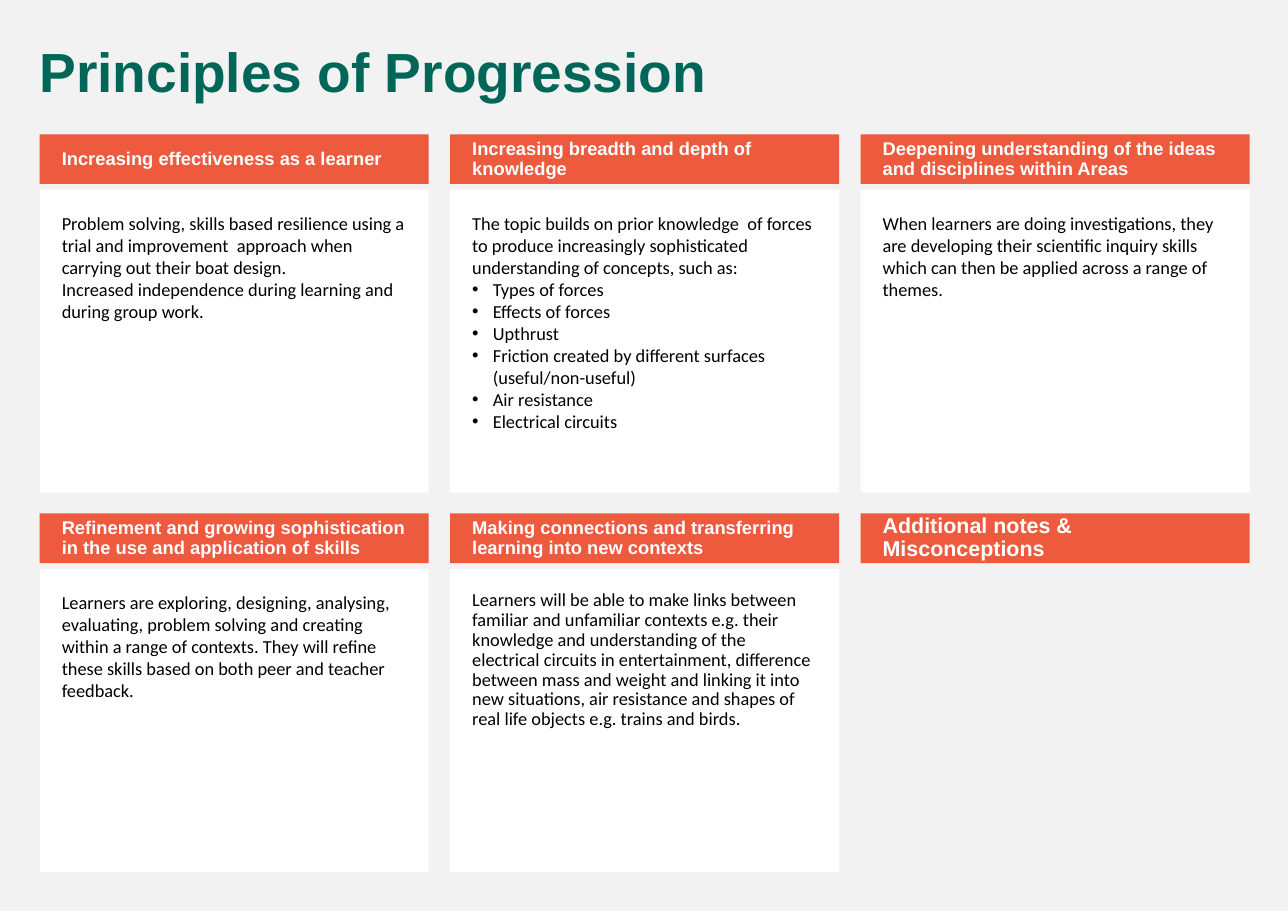
from lxml.etree import SubElement
from pptx import Presentation
from pptx.dml.color import RGBColor
from pptx.enum.shapes import MSO_SHAPE as Shape
from pptx.enum.text import MSO_ANCHOR as Anchor, PP_ALIGN as Align
from pptx.oxml.ns import qn
from pptx.util import Pt

GREY = RGBColor(0xF2, 0xF2, 0xF2)
WHITE = RGBColor(0xFF, 0xFF, 0xFF)
BLACK = RGBColor(0x00, 0x00, 0x00)
ORANGE = RGBColor(0xED, 0x5A, 0x3E)
GREEN = RGBColor(0x00, 0x67, 0x58)

# Card grid
LEFT, TOP = 26, 87.8
COL_STEP, ROW_STEP = 268.2, 247.8
CARD_W, HEADER_H, BODY_H = 254.2, 32.4, 198
BODY_DROP = 36.2
INDENT = 13.5

# Text formats
TIGHT = {"line_spacing": 0.9, "space_before": Pt(11)}
PLAIN = {}
TITLE_FONT = {"name": "Arial", "size": Pt(36), "bold": True}
HEADER_FONT = {"name": "Arial", "size": Pt(12), "bold": True}
NOTES_FONT = HEADER_FONT | {"size": Pt(14)}
BODY_FONT = {"name": "Calibri", "size": Pt(12)}
HEADER_FRAME = {"margin_left": Pt(14.4), "margin_right": Pt(7.2),
                "margin_top": Pt(3.6), "margin_bottom": Pt(3.6),
                "vertical_anchor": Anchor.MIDDLE}
BODY_FRAME = {"margin_left": Pt(14.4), "margin_right": Pt(14.4),
              "margin_top": Pt(14.4), "margin_bottom": Pt(14.4),
              "vertical_anchor": Anchor.TOP}

# Column, row, header, header font, body paragraphs, body spacing
CARDS = [
    (0, 0, "Increasing effectiveness as a learner", HEADER_FONT,
     ["Problem solving, skills based resilience using a trial and "
      "improvement  approach when carrying out their boat design.",
      "Increased independence during learning and during group work."],
     PLAIN),
    (1, 0, "Increasing breadth and depth of knowledge", HEADER_FONT,
     ["The topic builds on prior knowledge  of forces to produce "
      "increasingly sophisticated understanding of concepts, such as:",
      "• Types of forces",
      "• Effects of forces",
      "• Upthrust",
      "• Friction created by different surfaces (useful/non-useful)",
      "• Air resistance",
      "• Electrical circuits"],
     PLAIN),
    (2, 0, "Deepening understanding of the ideas and disciplines within Areas",
     HEADER_FONT,
     ["When learners are doing investigations, they are developing their "
      "scientific inquiry skills which can then be applied across a range "
      "of themes."],
     PLAIN),
    (0, 1, "Refinement and growing sophistication in the use and "
     "application of skills", HEADER_FONT,
     ["Learners are exploring, designing, analysing, evaluating, problem "
      "solving and creating within a range of contexts. They will refine "
      "these skills based on both peer and teacher feedback."],
     PLAIN),
    (1, 1, "Making connections and transferring learning into new contexts",
     HEADER_FONT,
     ["Learners will be able to make links between familiar and unfamiliar "
      "contexts e.g. their knowledge and understanding of the electrical "
      "circuits in entertainment, difference between mass and weight and "
      "linking it into new situations, air resistance and shapes of real "
      "life objects e.g. trains and birds."],
     TIGHT),
    (2, 1, "Additional notes & Misconceptions", NOTES_FONT, [], PLAIN),
]


def set_all(obj, values):
    for name, value in values.items():
        setattr(obj, name, value)


def add_bullet(p):
    pPr = p._p.get_or_add_pPr()
    pPr.set("marL", str(Pt(INDENT)))
    pPr.set("indent", str(-Pt(INDENT)))
    SubElement(pPr, qn("a:buFont"), typeface="Arial")
    SubElement(pPr, qn("a:buChar"), char="•")


def write(tf, lines, font, color, spacing):
    tf.word_wrap = True
    for i, line in enumerate(lines):
        p = tf.paragraphs[0] if i == 0 else tf.add_paragraph()
        p.alignment = Align.LEFT
        set_all(p, spacing)
        if line.startswith("• "):
            add_bullet(p)
        r = p.add_run()
        r.text = line.removeprefix("• ")
        set_all(r.font, font)
        r.font.color.rgb = color


def add_box(s, x, y, h, fill, frame):
    sp = s.shapes.add_shape(Shape.RECTANGLE, Pt(x), Pt(y), Pt(CARD_W), Pt(h))
    sp.shadow.inherit = False
    sp.fill.solid()
    sp.fill.fore_color.rgb = fill
    sp.line.fill.background()
    set_all(sp.text_frame, frame)
    return sp.text_frame


def add_card(s, col, row, header, header_font, body, spacing):
    x, y = LEFT + col * COL_STEP, TOP + row * ROW_STEP
    if body:
        tf = add_box(s, x, y + BODY_DROP, BODY_H, WHITE, BODY_FRAME)
        write(tf, body, BODY_FONT, BLACK, spacing)
    tf = add_box(s, x, y, HEADER_H, ORANGE, HEADER_FRAME)
    write(tf, [header], header_font, WHITE, TIGHT)


def add_title(s, text):
    sp = s.shapes.add_textbox(Pt(18.7), Pt(25.9), Pt(797.8), Pt(46.8))
    write(sp.text_frame, [text], TITLE_FONT, GREEN, TIGHT)


def main():
    prs = Presentation()
    prs.slide_width, prs.slide_height = Pt(841.7), Pt(595.4)
    s = prs.slides.add_slide(prs.slide_layouts[6])

    # Background
    s.background.fill.solid()
    s.background.fill.fore_color.rgb = GREY

    # Title and cards
    add_title(s, "Principles of Progression")
    for card in CARDS:
        add_card(s, *card)

    prs.save("out.pptx")


if __name__ == "__main__":
    main()
